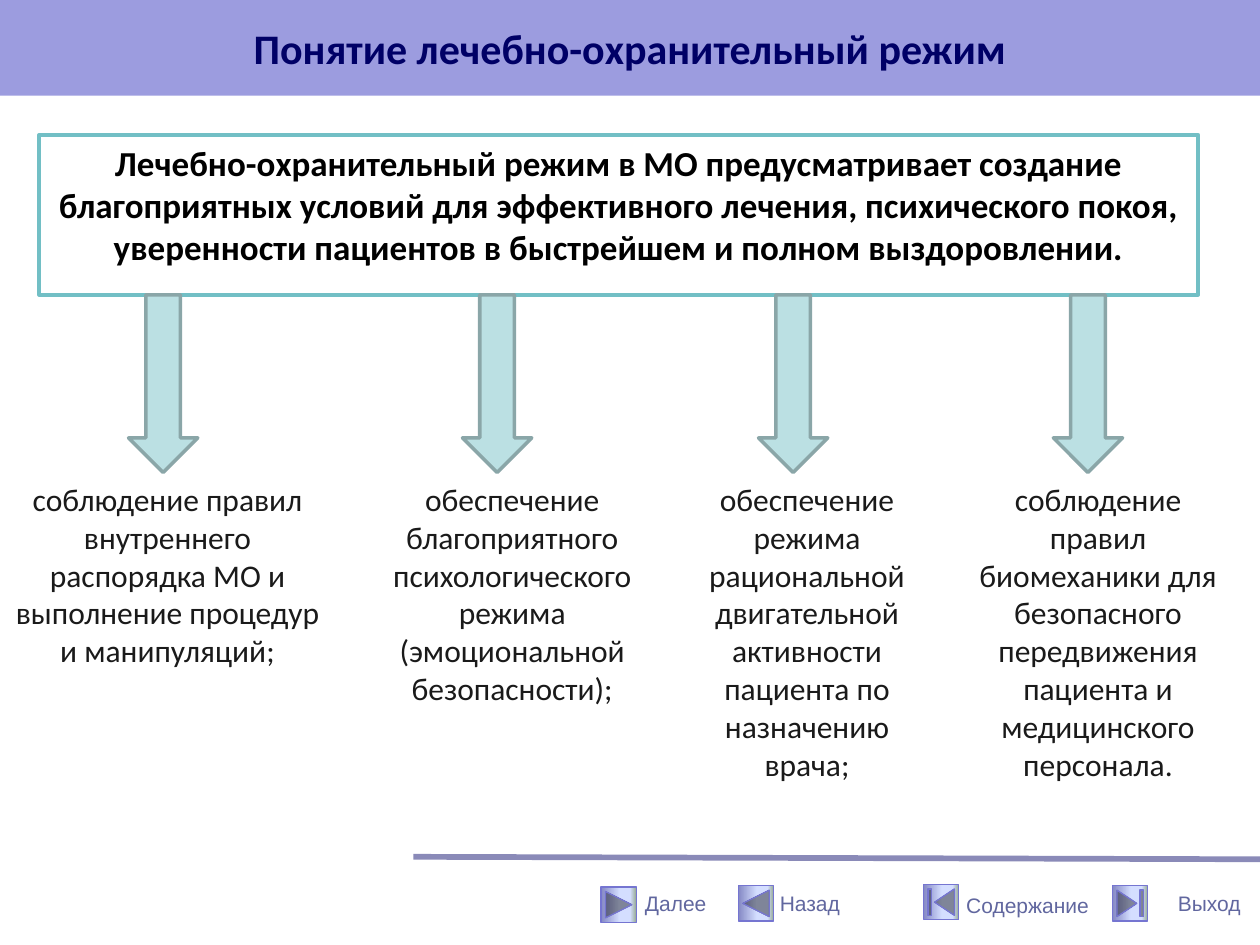
import dataclasses

import lxml.etree
import pptx
import pptx.dml.color
import pptx.enum.shapes
import pptx.enum.text
import pptx.oxml.ns
import pptx.util

SHAPES = pptx.enum.shapes.MSO_SHAPE
ANCHOR = pptx.enum.text.MSO_ANCHOR
ALIGN = pptx.enum.text.PP_ALIGN
FIT = pptx.enum.text.MSO_AUTO_SIZE


@dataclasses.dataclass(frozen=True)
class Theme:
    """Colours, fonts and sizes of the slide."""
    banner: str = "9C9CDF"
    title: str = "000066"
    frame: str = "72BFC5"
    statement: str = "000000"
    arrow: str = "BBE0E3"
    arrow_edge: str = "8AA6A8"
    body: str = "1A1A1A"
    rule: str = "8A8AB8"
    button_edge: str = "7575D1"
    label: str = "61679F"
    button_stops: tuple = ((0, "8488C4"), (53, "D4DEFF"), (83, "D4DEFF"), (100, "96AB94"))
    text_font: str = "Calibri"
    label_font: str = "Arial"
    title_size: int = 24
    statement_size: int = 20
    body_size: int = 18
    label_size: int = 12


@dataclasses.dataclass(frozen=True)
class Box:
    """A rectangle on a grid of 100 columns by 75 rows, each cell 0.1 inch."""
    left: float
    top: float
    width: float
    height: float

    def inner(self, left, top, width, height):
        """Return a box placed relative to this one."""
        return Box(self.left + left, self.top + top, width, height)

    def lengths(self):
        """Return left, top, width and height as slide lengths."""
        return [pptx.util.Inches(value / 10) for value in dataclasses.astuple(self)]


THEME = Theme()
SLIDE = Box(0, 0, 100, 75)
ITEMS = (
    (10.2, 0, 26.6, 16.2, "соблюдение правил внутреннего распорядка МО и выполнение процедур и манипуляций;"),
    (36.7, 29.7, 21.9, 19.2, "обеспечение благоприятного психологического режима (эмоциональной безопасности);"),
    (60.2, 53.1, 21.9, 25.2, "обеспечение режима рациональной двигательной активности пациента по назначению врача;"),
    (83.6, 75.8, 22.7, 25.2, "соблюдение правил биомеханики для безопасного передвижения пациента и медицинского персонала."),
)
BUTTONS = (
    (SHAPES.ACTION_BUTTON_FORWARD_OR_NEXT, 14.9, 2.4, "Далее", 17.4, 2.2, 6.9, 3),
    (SHAPES.ACTION_BUTTON_BACK_OR_PREVIOUS, 25.8, 2.3, "Назад", 28.1, 2.2, 6.8, 3),
    (SHAPES.ACTION_BUTTON_BEGINNING, 40.5, 2.2, "Содержание", 42.9, 2.3, 11.8, 3),
    (SHAPES.ACTION_BUTTON_END, 55.5, 2.3, "Выход", 59.7, 1.2, 7.5, 5),
)


def color(value):
    """Return a colour from its hexadecimal form."""
    return pptx.dml.color.RGBColor.from_string(value)


def place(shape, box):
    """Move and size a shape to a box."""
    shape.left, shape.top, shape.width, shape.height = box.lengths()


def outline(shape, line_color, width):
    """Give a shape or connector its line."""
    shape.line.color.rgb = color(line_color)
    shape.line.width = pptx.util.Pt(width)


def write(shape, text, *, size, ink, font=THEME.text_font, bold=False, align=ALIGN.CENTER,
          anchor=ANCHOR.MIDDLE, wrap=True, fit=FIT.NONE):
    """Put one formatted paragraph into a shape and return it."""
    frame = shape.text_frame
    frame.word_wrap = wrap
    frame.auto_size = fit
    frame.vertical_anchor = anchor
    paragraph = frame.paragraphs[0]
    paragraph.alignment = align
    run = paragraph.add_run()
    run.text = text
    run.font.name = font
    run.font.size = pptx.util.Pt(size)
    run.font.bold = bold
    run.font.color.rgb = color(ink)
    return paragraph


def add_title(slide, box):
    """Fill the title placeholder as a banner."""
    title = slide.shapes.title
    place(title, box)
    title.fill.solid()
    title.fill.fore_color.rgb = color(THEME.banner)
    write(title, "Понятие лечебно-охранительный режим", size=THEME.title_size,
          ink=THEME.title, bold=True)


def add_statement(slide, box):
    """Fill the body placeholder as a framed statement without a bullet."""
    body = slide.placeholders[1]
    place(body, box)
    outline(body, THEME.frame, 2)
    paragraph = write(
        body, "Лечебно-охранительный режим в МО предусматривает создание благоприятных условий "
        "для эффективного лечения, психического покоя, уверенности пациентов в быстрейшем "
        "и полном выздоровлении.",
        size=THEME.statement_size, ink=THEME.statement, bold=True, anchor=ANCHOR.TOP)
    paragraph.space_before = pptx.util.Pt(0.2 * THEME.statement_size)
    properties = paragraph._p.get_or_add_pPr()
    properties.set("marL", "0")
    properties.set("indent", "0")
    lxml.etree.SubElement(properties, pptx.oxml.ns.qn("a:buNone"))


def add_items(slide, box):
    """Draw the arrows and the text below each of them."""
    arrow_height = 14.1
    for arrow_left, text_left, width, height, text in ITEMS:
        arrow = slide.shapes.add_shape(
            SHAPES.DOWN_ARROW, *box.inner(arrow_left, 0, 5.5, arrow_height).lengths())
        arrow.shadow.inherit = False
        arrow.fill.solid()
        arrow.fill.fore_color.rgb = color(THEME.arrow)
        outline(arrow, THEME.arrow_edge, 2)
        item = slide.shapes.add_textbox(
            *box.inner(text_left, arrow_height, width, height).lengths())
        write(item, text, size=THEME.body_size, ink=THEME.body, fit=FIT.SHAPE_TO_FIT_TEXT)


def fill_gradient(shape, stops):
    """Fill a shape with a left-to-right gradient."""
    shape.fill.gradient()
    shape.fill.gradient_angle = 0
    name = pptx.oxml.ns.qn
    stop_list = shape._element.spPr.find(name("a:gradFill")).find(name("a:gsLst"))
    for old_stop in list(stop_list):
        stop_list.remove(old_stop)
    for position, value in stops:
        stop = lxml.etree.SubElement(stop_list, name("a:gs"), pos=str(position * 1000))
        lxml.etree.SubElement(stop, name("a:srgbClr"), val=value)


def add_navigation(slide, box):
    """Draw the rule and the labelled navigation buttons."""
    left, top, width, _ = box.lengths()
    rule = slide.shapes.add_connector(
        pptx.enum.shapes.MSO_CONNECTOR.STRAIGHT, left, top, left + width,
        top + pptx.util.Inches(0.02))
    outline(rule, THEME.rule, 3.25)
    lxml.etree.SubElement(rule._element.spPr, pptx.oxml.ns.qn("a:effectLst"))
    for kind, button_left, button_top, text, *label_place in BUTTONS:
        button = slide.shapes.add_shape(
            kind, *box.inner(button_left, button_top, 2.8, 2.8).lengths())
        button.shadow.inherit = False
        fill_gradient(button, THEME.button_stops)
        outline(button, THEME.button_edge, 0.75)
        label = slide.shapes.add_textbox(*box.inner(*label_place).lengths())
        write(label, text, size=THEME.label_size, ink=THEME.label, font=THEME.label_font,
              align=ALIGN.LEFT, wrap=False)


def main():
    """Build and save the presentation."""
    presentation = pptx.Presentation()
    _, _, presentation.slide_width, presentation.slide_height = SLIDE.lengths()
    slide = presentation.slides.add_slide(presentation.slide_layouts[1])
    add_navigation(slide, SLIDE.inner(32.8, 68, 67.2, 7))
    add_title(slide, SLIDE.inner(0, 0, 100, 7.6))
    add_statement(slide, SLIDE.inner(3.1, 10.7, 92, 12.7))
    add_items(slide, SLIDE.inner(0, 23.4, 100, 39.3))
    presentation.save("out.pptx")


if __name__ == "__main__":
    main()
